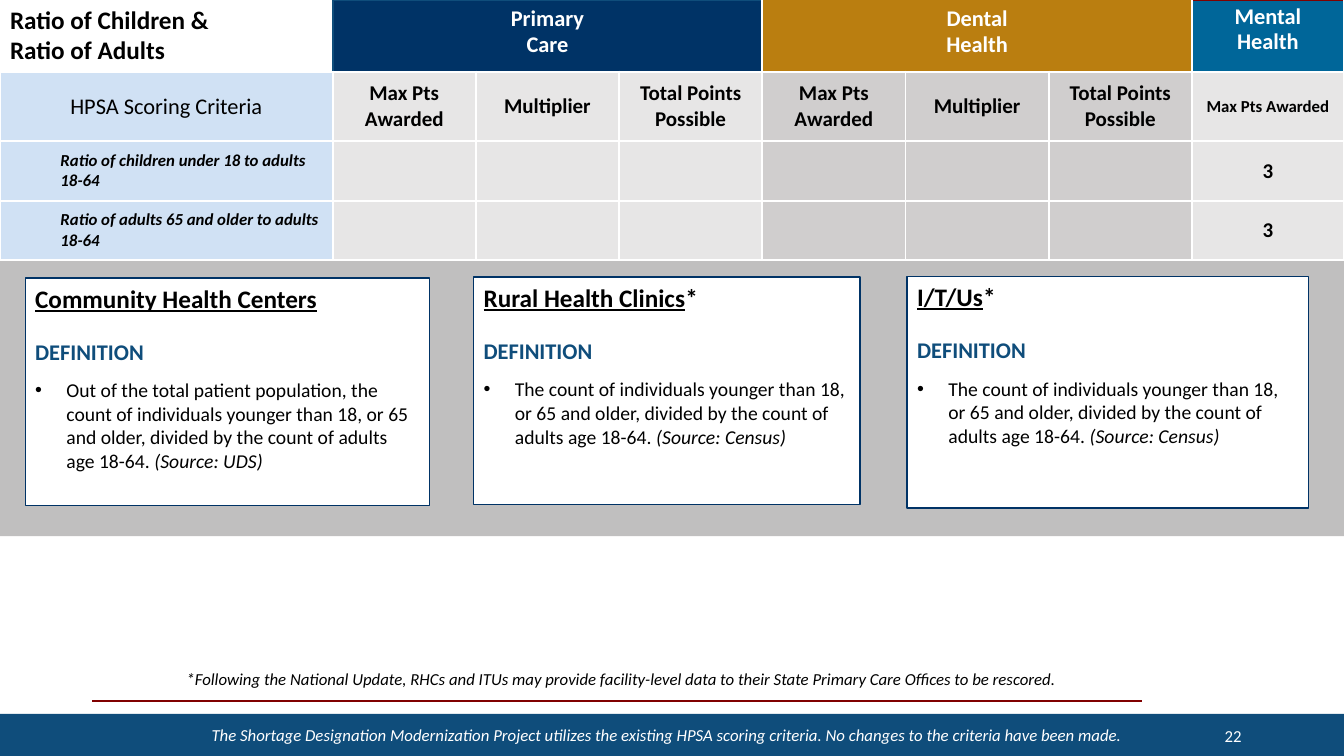
from lxml import etree
from pptx import Presentation
from pptx.dml.color import RGBColor
from pptx.enum.shapes import MSO_CONNECTOR, MSO_SHAPE
from pptx.enum.text import MSO_ANCHOR, PP_ALIGN
from pptx.oxml.ns import qn
from pptx.util import Emu, Inches, Pt

LEFT, CENTER, RIGHT = PP_ALIGN.LEFT, PP_ALIGN.CENTER, PP_ALIGN.RIGHT
TOP, MIDDLE = MSO_ANCHOR.TOP, MSO_ANCHOR.MIDDLE
RECTANGLE = MSO_SHAPE.RECTANGLE
STRAIGHT = MSO_CONNECTOR.STRAIGHT

WHITE = RGBColor(0xFF, 0xFF, 0xFF)
BLACK = RGBColor(0x00, 0x00, 0x00)
BLUE = RGBColor(0x0F, 0x4D, 0x7B)
NAVY = RGBColor(0x00, 0x33, 0x66)
GOLD = RGBColor(0xBA, 0x7E, 0x10)
TEAL = RGBColor(0x00, 0x66, 0x99)
MAROON = RGBColor(0x80, 0x00, 0x00)
PANEL_GRAY = RGBColor(0xC0, 0xBF, 0xBF)
PALE_BLUE = RGBColor(0xD0, 0xE1, 0xF4)
LIGHT_GRAY = RGBColor(0xE7, 0xE6, 0xE6)
MID_GRAY = RGBColor(0xD0, 0xCE, 0xCE)

GRID_COLUMNS, GRID_ROWS = 160, 90


def add_text(paragraph, text, size=12, color=BLACK, bold=False, italic=False,
             underline=False, align=LEFT, spacing=None, before=0):
    """Add one run and set the format of its paragraph."""
    paragraph.alignment = align
    if spacing:
        paragraph.line_spacing = spacing
    if before:
        paragraph.space_before = Pt(before)
    run = paragraph.add_run()
    run.text = text
    font = run.font
    font.name, font.size = "Calibri", Pt(size)
    font.bold, font.italic, font.underline = bold, italic, underline
    font.color.rgb = color


class SlideBuilder:
    """Draws on one slide; lengths are grid columns and rows."""

    def __init__(self, presentation):
        self.column = presentation.slide_width / GRID_COLUMNS
        self.row = presentation.slide_height / GRID_ROWS
        self.slide = presentation.slides.add_slide(presentation.slide_layouts[6])
        self.shapes = self.slide.shapes

    def place(self, x, y, width, height):
        return (Emu(round(x * self.column)), Emu(round(y * self.row)),
                Emu(round(width * self.column)), Emu(round(height * self.row)))

    def rectangle(self, box, fill, line=None):
        shape = self.shapes.add_shape(RECTANGLE, *self.place(*box))
        shape.shadow.inherit = False
        shape.fill.solid()
        shape.fill.fore_color.rgb = fill
        if line is None:
            shape.line.fill.background()
        else:
            shape.line.color.rgb = line
            shape.line.width = Pt(1)
        return shape

    def rule(self, x1, x2, y, color):
        left, top, width, _ = self.place(x1, y, x2 - x1, 0)
        line = self.shapes.add_connector(STRAIGHT, left, top, left + width, top)
        line.line.color.rgb = color
        line.line.width = Pt(1.5)
        etree.SubElement(line._element.spPr, qn("a:effectLst"))

    def label(self, box, text, anchor=TOP, **style):
        frame = self.shapes.add_textbox(*self.place(*box)).text_frame
        frame.word_wrap = True
        frame.vertical_anchor = anchor
        add_text(frame.paragraphs[0], text, **style)

    def card(self, box, title, mark, definition, source):
        frame = self.rectangle(box, WHITE, NAVY).text_frame
        frame.word_wrap = True
        frame.vertical_anchor = TOP
        heading = frame.paragraphs[0]
        add_text(heading, title, size=18, bold=True, underline=True)
        if mark:
            add_text(heading, mark, size=18, bold=True)
        add_text(frame.add_paragraph(), "DEFINITION", size=16, color=BLUE,
                 bold=True, before=17.5)
        item = frame.add_paragraph()
        properties = item._p.get_or_add_pPr()
        properties.set("marL", str(Inches(0.31)))
        properties.set("indent", str(-Inches(0.31)))
        etree.SubElement(properties, qn("a:buFont"), typeface="Arial")
        etree.SubElement(properties, qn("a:buChar"), char="•")
        add_text(item, definition, size=14, before=9.75)
        add_text(item, source, size=14, italic=True, before=9.75)

    def table(self, box, widths, heights):
        table = self.shapes.add_table(
            len(heights), len(widths), *self.place(*box)).table
        table.first_row = table.horz_banding = False
        for column, width in zip(table.columns, widths):
            column.width = Emu(round(width * self.column))
        for row, height in zip(table.rows, heights):
            row.height = Emu(round(height * self.row))
        return table

    def cell(self, cell, fill, lines=(), anchor=MIDDLE, indent=0, edges=None, **style):
        properties = cell._tc.get_or_add_tcPr()
        for side in "LRTB":
            border = etree.SubElement(properties, qn(f"a:ln{side}"), w=str(Pt(1.5)))
            solid = etree.SubElement(border, qn("a:solidFill"))
            color = (edges or {}).get(side, WHITE)
            etree.SubElement(solid, qn("a:srgbClr"), val=str(color))
        cell.fill.solid()
        cell.fill.fore_color.rgb = fill
        cell.vertical_anchor = anchor
        for number, line in enumerate(lines):
            frame = cell.text_frame
            paragraph = frame.add_paragraph() if number else frame.paragraphs[0]
            if indent:
                paragraph._p.get_or_add_pPr().set("marL", str(Inches(indent)))
            line_style = {**style, "spacing": style.get("spacing") or (0.9 if number else None)}
            if not style.get("tight", True):
                line_style["spacing"] = None
            line_style.pop("tight", None)
            add_text(paragraph, line, **line_style)


def build_scoring_table(builder):
    table = builder.table((0, 0, 160, 30.72), [39.6] + [17.05] * 6 + [18.1],
                          [7.56, 8.28, 7.08, 7.08])
    grays = [LIGHT_GRAY] * 3 + [MID_GRAY] * 3 + [LIGHT_GRAY]

    # Program headings
    builder.cell(table.cell(0, 0), WHITE, ["Ratio of Children &", "Ratio of Adults"],
                 anchor=TOP, size=18, bold=True, tight=False, edges={"R": BLUE})
    heading = {"anchor": TOP, "size": 16, "bold": True, "color": WHITE, "align": CENTER}
    for first, fill, edge, lines in ((1, NAVY, BLUE, ["Primary", "Care"]),
                                     (4, GOLD, GOLD, ["Dental", "Health"])):
        table.cell(0, first).merge(table.cell(0, first + 2))
        edges = {"T": edge, "L": BLUE if first == 1 else WHITE}
        builder.cell(table.cell(0, first), fill, lines, edges=edges, **heading)
        for column in (first + 1, first + 2):
            builder.cell(table.cell(0, column), fill, edges={"T": edge})
    builder.cell(table.cell(0, 7), TEAL, ["Mental Health"], spacing=0.9,
                 edges={"T": MAROON}, **heading)

    # Column headings
    builder.cell(table.cell(1, 0), PALE_BLUE, ["HPSA Scoring Criteria"],
                 size=16, align=CENTER)
    names = ["Max Pts Awarded", "Multiplier", "Total Points Possible"] * 2
    for column, name in enumerate(names + ["Max Pts Awarded"], start=1):
        builder.cell(table.cell(1, column), grays[column - 1], [name], bold=True,
                     size=12 if column == 7 else 15, align=CENTER)

    # Criteria with their mental health points
    criteria = (("Ratio of children under 18 to adults 18-64", "3"),
                ("Ratio of adults 65 and older to adults 18-64", "3"))
    for row, (criterion, points) in enumerate(criteria, start=2):
        builder.cell(table.cell(row, 0), PALE_BLUE, [criterion], indent=0.5,
                     bold=True, italic=True)
        for column, gray in enumerate(grays, start=1):
            builder.cell(table.cell(row, column), gray, [points] if column == 7 else [],
                         size=15, bold=True, align=CENTER)


def main():
    presentation = Presentation()
    presentation.slide_width, presentation.slide_height = Inches(13.33), Inches(7.5)
    builder = SlideBuilder(presentation)

    # Background bands and rule
    builder.rectangle((0, 85, 160, 5), BLUE)
    builder.rule(11, 136, 83.4, MAROON)
    builder.rectangle((0, 30.84, 160, 33), PANEL_GRAY)

    build_scoring_table(builder)

    # Definition cards
    census = ("The count of individuals younger than 18, or 65 and older, "
              "divided by the count of adults age 18-64. ", "(Source: Census)")
    patients = ("Out of the total patient population, the count of individuals younger "
                "than 18, or 65 and older, divided by the count of adults age 18-64. ",
                "(Source: UDS)")
    builder.card((3, 33.1, 48.1, 27.1), "Community Health Centers", "", *patients)
    builder.card((56.4, 33, 46, 27.1), "Rural Health Clinics", "*", *census)
    builder.card((108, 32.9, 47.8, 27.6), "I/T/Us", "*", *census)

    # Footnote, footer and slide number
    builder.label((10, 79, 128, 3.6), "*Following the National Update, RHCs and ITUs may "
                  "provide facility-level data to their State Primary Care Offices to be "
                  "rescored.", italic=True, align=CENTER)
    builder.label((24, 85.7, 112, 4.3), "The Shortage Designation Modernization Project "
                  "utilizes the existing HPSA scoring criteria. No changes to the criteria "
                  "have been made.", italic=True, color=WHITE)
    builder.label((113, 85.2, 36, 4.8), "22", anchor=MIDDLE, color=WHITE, align=RIGHT)

    presentation.save("out.pptx")


if __name__ == "__main__":
    main()
